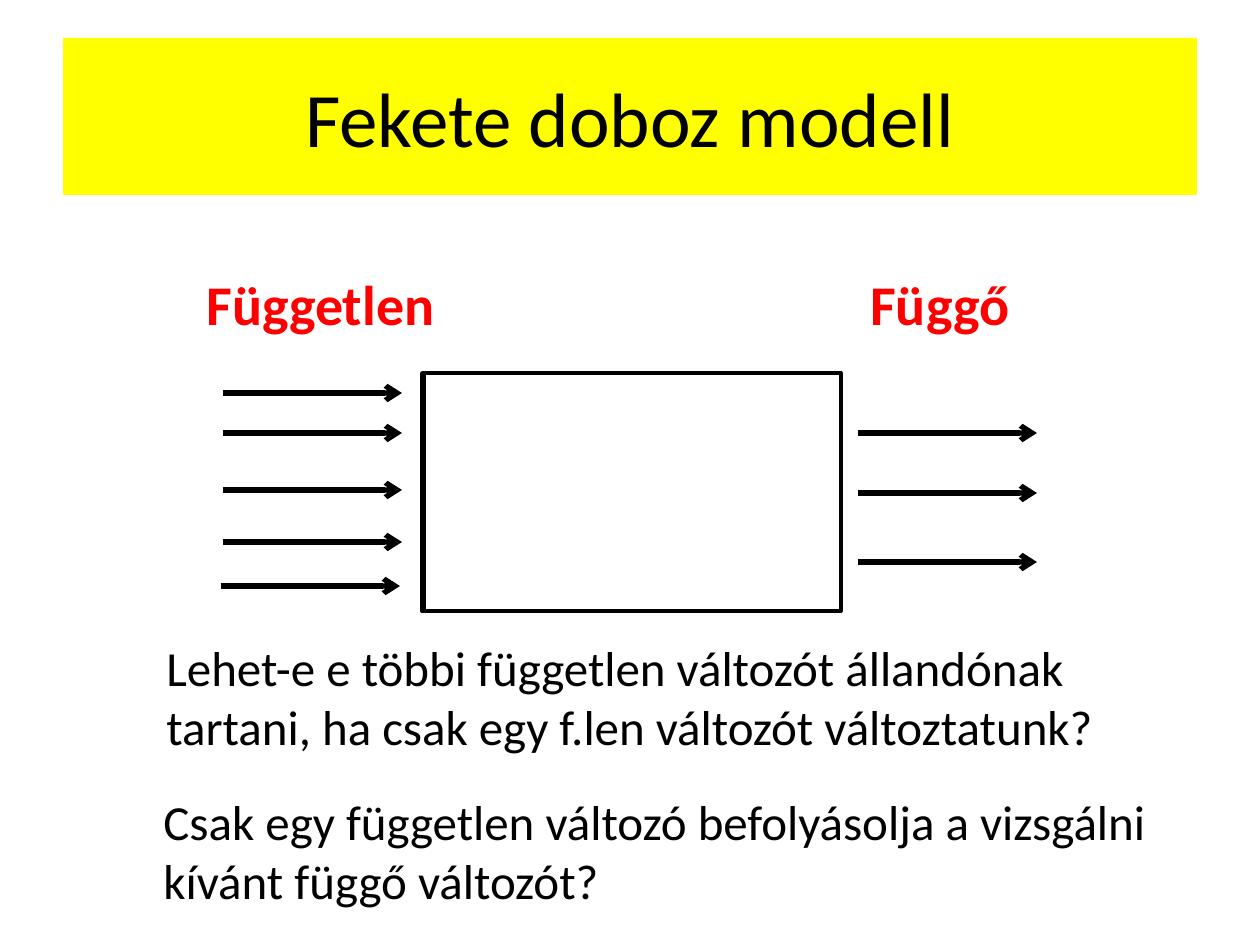
import pptx
import pptx.util
import pptx.dml.color
import pptx.enum.shapes
import pptx.enum.text
import pptx.oxml
import pptx.oxml.ns

SCALE = 914400 / 126  # EMU per px
FONT = "Calibri"
COLORS = {"band": "FFFF00", "label": "FF0000", "ink": "000000", "paper": "FFFFFF"}


def px(n):
    return pptx.util.Emu(round(n * SCALE))


def rgb(name):
    return pptx.dml.color.RGBColor.from_string(COLORS[name])


def write(sp, text, size, color="ink", bold=False, wrap=True):
    tf = sp.text_frame
    tf.text = text
    tf.word_wrap = wrap
    p = tf.paragraphs[0]
    font = p.runs[0].font
    font.name, font.size, font.bold = FONT, pptx.util.Pt(size), bold
    font.color.rgb = rgb(color)
    return p


def add_title(s, x, y, w, h, text):
    sp = s.shapes.title
    sp.left, sp.top, sp.width, sp.height = px(x), px(y), px(w), px(h)
    sp.fill.solid()
    sp.fill.fore_color.rgb = rgb("band")
    write(sp, text, 44).alignment = pptx.enum.text.PP_ALIGN.CENTER
    sp.text_frame.vertical_anchor = pptx.enum.text.MSO_ANCHOR.MIDDLE


def add_text(s, x, y, w, h, text, size, **style):
    sp = s.shapes.add_textbox(px(x), px(y), px(w), px(h))
    write(sp, text, size, **style)


def add_box(s, x, y, w, h):
    sp = s.shapes.add_shape(pptx.enum.shapes.MSO_SHAPE.RECTANGLE,
                            px(x), px(y), px(w), px(h))
    sp.shadow.inherit = False
    sp.fill.solid()
    sp.fill.fore_color.rgb = rgb("paper")
    sp.line.color.rgb = rgb("ink")
    sp.line.width = pptx.util.Pt(2)


def add_arrow(s, x, y, length):
    line = s.shapes.add_connector(pptx.enum.shapes.MSO_CONNECTOR.STRAIGHT,
                                  px(x), px(y), px(x + length), px(y))
    line.line.color.rgb = rgb("ink")
    line.line.width = pptx.util.Pt(3)
    ns = pptx.oxml.ns.nsdecls("a")
    line.line._get_or_add_ln().append(
        pptx.oxml.parse_xml(f'<a:tailEnd {ns} type="arrow"/>'))
    line._element.spPr.append(pptx.oxml.parse_xml(f"<a:effectLst {ns}/>"))


def add_model(s, x, y, w, h):
    # Doubled black box: the slight offset thickens its left side
    for dx in (0, 2):
        add_box(s, x + dx, y, w, h)
    # Inputs on the left, outputs on the right: (dx, dy) from the box corner
    inputs = [(-199, 20), (-199, 60), (-199, 117), (-199, 169), (-201, 213)]
    outputs = [(436, 60), (436, 120), (436, 189)]
    for dx, dy in inputs + outputs:
        add_arrow(s, x + dx, y + dy, 179)
    # Variable labels
    for dx, width, label in ((-228, 256, "Független"), (436, 165, "Függő")):
        add_text(s, x + dx, y - 110, width, 81, label, 32,
                 color="label", bold=True, wrap=False)


def add_questions(s, x, y):
    add_text(s, x + 3, y, 1038, 131,
             "Lehet-e e többi független változót állandónak tartani, "
             "ha csak egy f.len változót változtatunk?", 28)
    add_text(s, x, y + 154, 1065, 135,
             "Csak egy független változó befolyásolja a vizsgálni "
             "kívánt függő változót?", 28)


def main():
    prs = pptx.Presentation()
    prs.slide_width, prs.slide_height = px(1260), px(945)
    s = prs.slides.add_slide(prs.slide_layouts[5])
    add_title(s, 63, 38, 1134, 157, "Fekete doboz modell")
    add_model(s, 422, 373, 417, 238)
    add_questions(s, 151, 631)
    prs.save("out.pptx")


if __name__ == "__main__":
    main()
